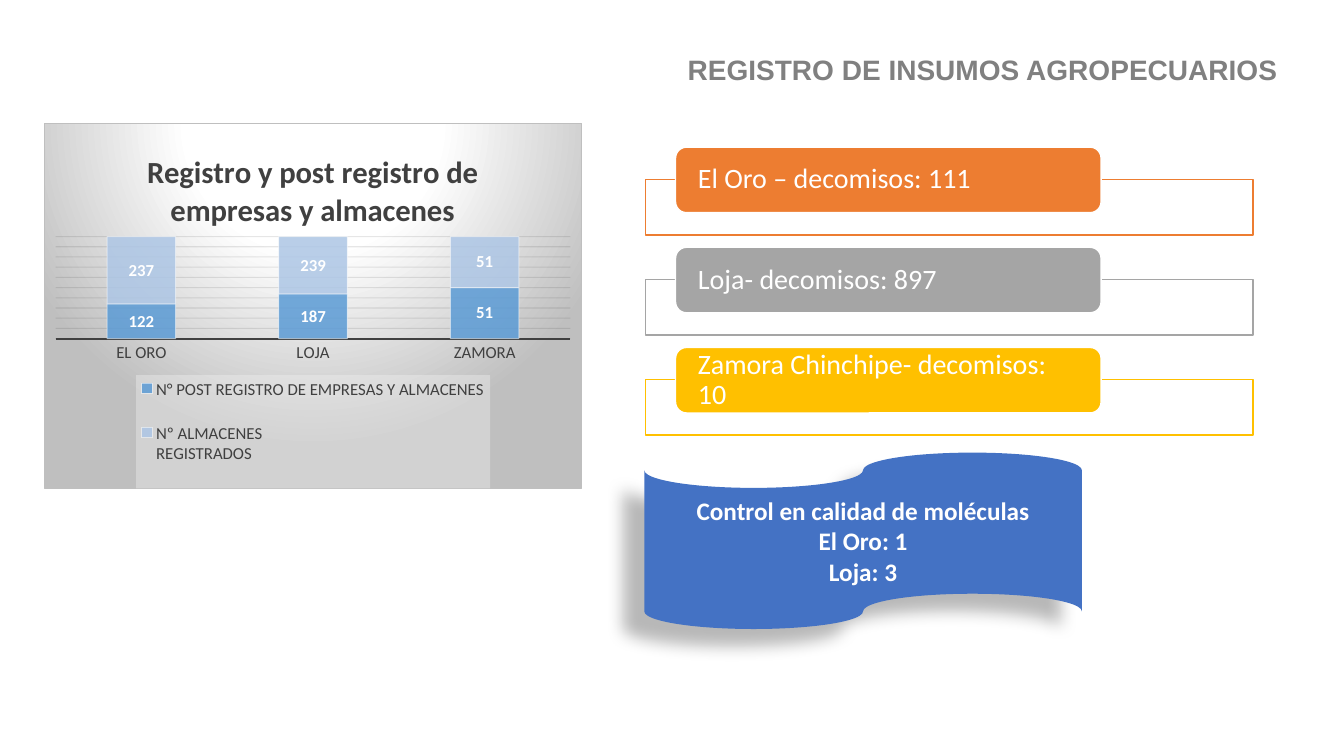
from dataclasses import dataclass

from pptx import Presentation
from pptx import util as u
from pptx.chart import data as chart_data
from pptx.dml.color import RGBColor
from pptx.enum import chart as charts, shapes, text
from pptx.oxml import parse_xml
from pptx.oxml.ns import nsdecls


@dataclass(frozen=True)
class Theme:
    """Colours, fonts and type sizes of the slide."""
    white: str = "FFFFFF"
    heading: str = "808080"
    dark: str = "404040"
    grid: str = "0D0D0D"
    border: str = "BFBFBF"
    legend: str = "F2F2F2"
    banner: str = "4472C4"
    series: tuple = ("5B9BD5", "ADC6E5")
    rows: tuple = ("ED7D31", "A5A5A5", "FFC000")
    heading_font: str = "Arial"
    body_font: str = "Calibri"
    heading_size: int = 20
    chart_title_size: int = 22
    row_size: int = 20
    banner_size: int = 18
    label_size: int = 12


THEME = Theme()
SERIES = (
    ("N° POST REGISTRO DE EMPRESAS Y ALMACENES\n", (122, 187, 51)),
    ("Nº ALMACENES \nREGISTRADOS\n", (237, 239, 51)),
)
SEIZURES = ("El Oro – decomisos: 111", "Loja- decomisos: 897", "Zamora Chinchipe- decomisos: 10")
MOLECULES = ("Control en calidad de moléculas", "El Oro: 1", "Loja: 3")


def inches(*lengths):
    """Convert lengths to Inches."""
    return [u.Inches(length) for length in lengths]


def set_font(font, size, color, name=THEME.body_font, bold=False):
    """Apply size, colour, typeface and weight to a font."""
    font.size, font.name, font.bold = u.Pt(size), name, bold
    font.color.rgb = RGBColor.from_string(color)


def set_line(line, color, width):
    """Give a line a solid colour and a width in points."""
    line.color.rgb = RGBColor.from_string(color)
    line.width = u.Pt(width)


def set_opacity(root, query, percent):
    """Make the colours found by the query partly transparent."""
    for color in root.xpath(query):
        color.append(parse_xml(f'<a:alpha {nsdecls("a")} val="{percent * 1000}"/>'))


def set_layout(parent, index, target="", **fractions):
    """Place a chart part by fractions of the chart area."""
    for old in parent.xpath("c:layout"):
        parent.remove(old)
    target = f'<c:layoutTarget val="{target}"/>' if target else ""
    modes = "".join(f'<c:{key}Mode val="edge"/>' for key in "xy")
    values = "".join(f'<c:{key} val="{value}"/>' for key, value in fractions.items())
    parent.insert(index, parse_xml(
        f'<c:layout {nsdecls("c")}><c:manualLayout>{target}{modes}{values}'
        "</c:manualLayout></c:layout>"))


def add_solid(slide, preset, box, fill, line=None):
    """Add a preset shape with a flat fill and an optional line."""
    shape = slide.shapes.add_shape(preset, *inches(*box))
    shape.shadow.inherit = False
    shape.fill.solid()
    shape.fill.fore_color.rgb = RGBColor.from_string(fill)
    if line:
        set_line(shape.line, line, 1)
    else:
        shape.line.fill.background()
    return shape


def add_heading(slide, box):
    """Place the slide title, aligned right."""
    title = slide.shapes.title
    title.left, title.top, title.width, title.height = inches(*box)
    title.text_frame.text = "REGISTRO DE INSUMOS AGROPECUARIOS"
    title.text_frame.vertical_anchor = text.MSO_ANCHOR.MIDDLE
    para = title.text_frame.paragraphs[0]
    para.alignment = text.PP_ALIGN.RIGHT
    para.line_spacing = 0.9
    set_font(para.font, THEME.heading_size, THEME.heading, THEME.heading_font, True)


def style_chart_area(chart):
    """Fill the chart area with a radial gradient and lay out its parts."""
    root = chart.element
    stops = "".join(
        f'<a:gs pos="{place * 1000}"><a:srgbClr val="{color}"/></a:gs>'
        for place, color in ((0, THEME.white), (39, THEME.white), (100, THEME.border)))
    root.xpath("c:chart")[0].addnext(parse_xml(
        f'<c:spPr {nsdecls("c", "a")}><a:gradFill><a:gsLst>{stops}</a:gsLst>'
        '<a:path path="circle"><a:fillToRect l="50000" t="-80000" r="50000" b="180000"/></a:path>'
        f'</a:gradFill><a:ln w="9525"><a:solidFill><a:srgbClr val="{THEME.border}"/>'
        "</a:solidFill></a:ln></c:spPr>"))
    root.xpath("c:chart/c:legend/c:overlay")[0].addnext(parse_xml(
        f'<c:spPr {nsdecls("c", "a")}><a:solidFill><a:srgbClr val="{THEME.legend}">'
        '<a:alpha val="39000"/></a:srgbClr></a:solidFill></c:spPr>'))
    set_layout(root.xpath("c:chart/c:title")[0], 1, x=0.18, y=0.06)
    set_layout(root.xpath("c:chart/c:plotArea")[0], 0, "inner", x=0.02, y=0.31, w=0.96, h=0.28)
    set_layout(root.xpath("c:chart/c:legend")[0], 1, x=0.17, y=0.69, w=0.66, h=0.31)
    set_opacity(root, "//c:ser/c:spPr/a:solidFill/a:srgbClr", 85)
    set_opacity(root, "//c:ser/c:spPr/a:ln//a:srgbClr", 50)
    set_opacity(root, "//c:majorGridlines//a:srgbClr", 10)


def add_registry_chart(slide, box):
    """Add the stacked chart of registered companies and stores."""
    values = chart_data.CategoryChartData()
    values.categories = ("EL ORO", "LOJA", "ZAMORA")
    for name, numbers in SERIES:
        values.add_series(name, numbers)
    chart = slide.shapes.add_chart(
        charts.XL_CHART_TYPE.COLUMN_STACKED_100, *inches(*box), values).chart
    set_font(chart.font, THEME.label_size, THEME.dark)
    chart.has_title = True
    chart.chart_title.text_frame.text = "Registro y post registro de empresas y almacenes"
    set_font(chart.chart_title.text_frame.paragraphs[0].font,
             THEME.chart_title_size, THEME.dark, bold=True)
    chart.has_legend = True
    chart.legend.position = charts.XL_LEGEND_POSITION.BOTTOM
    chart.legend.include_in_layout = False
    set_font(chart.legend.font, THEME.label_size, THEME.dark)

    chart.value_axis.visible = False
    chart.value_axis.maximum_scale, chart.value_axis.major_unit = 1, 0.1
    set_line(chart.value_axis.major_gridlines.format.line, THEME.grid, 0.75)
    chart.category_axis.major_tick_mark = charts.XL_TICK_MARK.NONE
    set_line(chart.category_axis.format.line, THEME.dark, 1.5)
    set_font(chart.category_axis.tick_labels.font, THEME.label_size, THEME.dark)

    plot = chart.plots[0]
    plot.gap_width, plot.overlap, plot.vary_by_categories = 150, 100, False
    for series, color in zip(plot.series, THEME.series):
        series.format.fill.solid()
        series.format.fill.fore_color.rgb = RGBColor.from_string(color)
        set_line(series.format.line, THEME.white, 0.75)
        labels = series.data_labels
        labels.show_value = True
        labels.position = charts.XL_LABEL_POSITION.CENTER
        set_font(labels.font, THEME.label_size, THEME.white, bold=True)
    style_chart_area(chart)


def add_seizures(slide, box):
    """Stack one outlined bar with a coloured label per province."""
    left, top, width, height = box
    pitch = height / len(SEIZURES)
    for index, (caption, color) in enumerate(zip(SEIZURES, THEME.rows)):
        y = top + index * pitch
        add_solid(slide, shapes.MSO_SHAPE.RECTANGLE,
                  (left, y + 0.32, width, 0.55), THEME.white, color)
        label = add_solid(slide, shapes.MSO_SHAPE.ROUNDED_RECTANGLE,
                          (left + 0.3, y, width * 0.7, 0.65), color, THEME.white)
        frame = label.text_frame
        frame.margin_left = frame.margin_right = u.Inches(0.19)
        frame.margin_top = frame.margin_bottom = 0
        frame.vertical_anchor = text.MSO_ANCHOR.MIDDLE
        frame.text = caption
        para = frame.paragraphs[0]
        para.alignment, para.line_spacing = text.PP_ALIGN.LEFT, 0.9
        set_font(para.font, THEME.row_size, THEME.white)


def add_molecules(slide, box):
    """Add the shadowed tape with the molecule quality counts."""
    tape = add_solid(slide, shapes.MSO_SHAPE.FLOWCHART_PUNCHED_TAPE, box, THEME.banner)
    tape.element.xpath(".//a:effectLst")[0].append(parse_xml(
        f'<a:outerShdw {nsdecls("a")} blurRad="{u.Pt(11.8)}" dist="{u.Pt(19.7)}" '
        f'dir="{141 * 60000}" algn="ctr" rotWithShape="0">'
        '<a:srgbClr val="000000"><a:alpha val="28000"/></a:srgbClr></a:outerShdw>'))
    frame = tape.text_frame
    frame.vertical_anchor = text.MSO_ANCHOR.MIDDLE
    frame.text = "\n".join(MOLECULES)
    for para in frame.paragraphs:
        para.alignment = text.PP_ALIGN.CENTER
        set_font(para.font, THEME.banner_size, THEME.white, bold=True)


def main():
    """Build the slide and save the deck."""
    deck = Presentation()
    deck.slide_width, deck.slide_height = inches(13.33, 7.5)
    page = deck.slides.add_slide(deck.slide_layouts[5])
    add_heading(page, (1.27, 0.4, 11.5, 0.62))
    add_registry_chart(page, (0.44, 1.22, 5.33, 3.63))
    add_seizures(page, (6.4, 1.46, 6.03, 2.98))
    add_molecules(page, (6.39, 4.49, 4.34, 1.75))
    deck.save("out.pptx")


if __name__ == "__main__":
    main()
